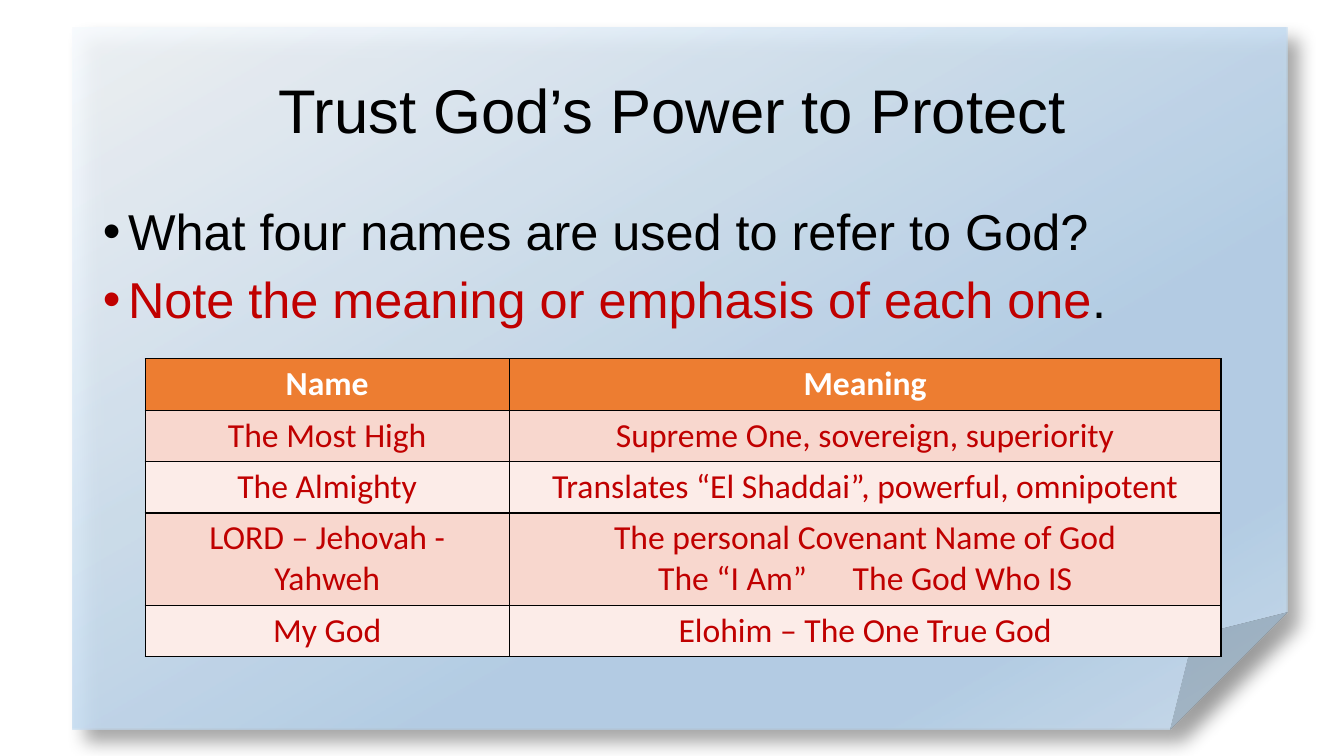
from lxml import etree
from pptx import Presentation, util as u
from pptx.dml.color import RGBColor
from pptx.enum import shapes, text
from pptx.oxml import parse_xml
from pptx.oxml.ns import nsdecls, qn

BLACK, WHITE, RED, ORANGE = "000000", "FFFFFF", "C00000", "ED7D31"
BANDS = ["F8D7CE", "FCECE8"]
PAPER_STOPS = [(0, "F7FAFD"), (64, "B5D2EC"), (83, "B5D2EC"), (100, "CEE1F2")]
PAPER_ALPHA = 87
NAMES = [
    ("Name", ["Meaning"]),
    ("The Most High", ["Supreme One, sovereign, superiority"]),
    ("The Almighty", ["Translates “El Shaddai”, powerful, omnipotent"]),
    ("LORD – Jehovah - Yahweh",
     ["The personal Covenant Name of God", "The “I Am”\tThe God Who IS"]),
    ("My God", ["Elohim – The One True God"]),
]


def rgb(value):
    return RGBColor.from_string(value)


def apply(target, values):
    for name, value in values.items():
        setattr(target, name, value)


def box(*lengths):
    return dict(zip(("left", "top", "width", "height"), map(u.Inches, lengths)))


class SlideBuilder:
    """Holds the text style and the slide being filled."""

    heading_font = "Arial"
    table_font = "Calibri"

    def __init__(self, presentation):
        self.slide = presentation.slides.add_slide(presentation.slide_layouts[1])

    def add_runs(self, paragraph, runs, font, size, bold=False, **layout):
        apply(paragraph, layout)
        for words, color in runs:
            run = paragraph.add_run()
            run.text = words
            apply(run.font, {"name": font, "size": u.Pt(size), "bold": bold})
            run.font.color.rgb = rgb(color)

    def paper(self, *lengths):
        """Sheet with a folded corner, behind everything else."""
        shape = self.slide.shapes.add_shape(
            shapes.MSO_SHAPE.FOLDED_CORNER, **box(*lengths))
        shape.line.fill.background()
        stops = "".join(
            f'<a:gs pos="{position * 1000}"><a:srgbClr val="{color}">'
            f'<a:alpha val="{PAPER_ALPHA * 1000}"/></a:srgbClr></a:gs>'
            for position, color in PAPER_STOPS)
        gradient = parse_xml(
            f'<a:gradFill {nsdecls("a")} rotWithShape="1"><a:gsLst>{stops}</a:gsLst>'
            '<a:lin ang="3600000" scaled="0"/></a:gradFill>')
        shadow = parse_xml(
            f'<a:effectLst {nsdecls("a")}><a:outerShdw blurRad="{u.Pt(13)}" '
            f'dist="{u.Pt(13)}" dir="2700000" algn="tl" rotWithShape="0">'
            '<a:srgbClr val="000000"><a:alpha val="40000"/></a:srgbClr>'
            '</a:outerShdw></a:effectLst>')
        properties = shape._element.spPr
        properties.find(qn("a:prstGeom")).addnext(gradient)
        properties.append(shadow)
        self.slide.shapes._spTree.insert(2, shape._element)

    def title(self, words, *lengths):
        shape = self.slide.shapes.title
        apply(shape, box(*lengths))
        apply(shape.text_frame, {"vertical_anchor": text.MSO_ANCHOR.MIDDLE,
                                 "auto_size": text.MSO_AUTO_SIZE.NONE})
        self.add_runs(shape.text_frame.paragraphs[0], [(words, BLACK)],
                      self.heading_font, 44, line_spacing=0.9,
                      alignment=text.PP_ALIGN.CENTER)

    def bullets(self, items, *lengths):
        shape = self.slide.placeholders[1]
        apply(shape, box(*lengths))
        frame = shape.text_frame
        frame.auto_size = text.MSO_AUTO_SIZE.NONE
        for index, runs in enumerate(items):
            paragraph = frame.add_paragraph() if index else frame.paragraphs[0]
            properties = paragraph._p.get_or_add_pPr()
            properties.set("marL", str(u.Inches(0.25)))
            properties.set("indent", str(u.Inches(-0.25)))
            etree.SubElement(properties, qn("a:buFont"), typeface="Arial")
            etree.SubElement(properties, qn("a:buChar"), char="•")
            self.add_runs(paragraph, runs, self.heading_font, 36, line_spacing=0.9,
                          space_before=u.Pt(10 if index else 0))

    def cell(self, cell, lines, fill, color, bold):
        cell.fill.solid()
        cell.fill.fore_color.rgb = rgb(fill)
        for index, side in enumerate(("lnL", "lnR", "lnT", "lnB")):
            border = parse_xml(
                f'<a:{side} {nsdecls("a")} w="{u.Pt(1)}"><a:solidFill>'
                f'<a:srgbClr val="{BLACK}"/></a:solidFill></a:{side}>')
            cell._tc.get_or_add_tcPr().insert(index, border)
        frame = cell.text_frame
        for index, words in enumerate(lines):
            paragraph = frame.add_paragraph() if index else frame.paragraphs[0]
            if "\t" in words:
                tabs = etree.SubElement(paragraph._p.get_or_add_pPr(), qn("a:tabLst"))
                etree.SubElement(tabs, qn("a:tab"), pos=str(u.Inches(1.93)), algn="l")
            self.add_runs(paragraph, [(words, color)], self.table_font, 24, bold,
                          alignment=text.PP_ALIGN.CENTER)

    def table(self, rows, widths, *lengths):
        table = self.slide.shapes.add_table(
            len(rows), len(widths), **box(*lengths)).table
        for column, width in zip(table.columns, widths):
            column.width = u.Inches(width)
        for index, (name, meanings) in enumerate(rows):
            table.rows[index].height = u.Inches(0.11 + 0.4 * len(meanings))
            header = index == 0
            fill = ORANGE if header else BANDS[(index - 1) % 2]
            for column, lines in enumerate(([name], meanings)):
                self.cell(table.cell(index, column), lines, fill,
                          WHITE if header else RED, header)


def main():
    presentation = Presentation()
    apply(presentation, {"slide_width": u.Inches(13.33),
                         "slide_height": u.Inches(7.5)})
    builder = SlideBuilder(presentation)
    builder.paper(0.72, 0.27, 12.05, 6.97)
    builder.title("Trust God’s Power to Protect", 0.92, 0.4, 11.5, 1.45)
    builder.bullets([
        [("What four names are used to refer to God?", BLACK)],
        [("Note the meaning or emphasis of each one", RED), (".", BLACK)],
    ], 0.92, 2, 11.5, 4.76)
    builder.table(NAMES, (3.61, 7.06), 1.44, 3.56, 10.67, 2.9)
    presentation.save("out.pptx")


if __name__ == "__main__":
    main()
